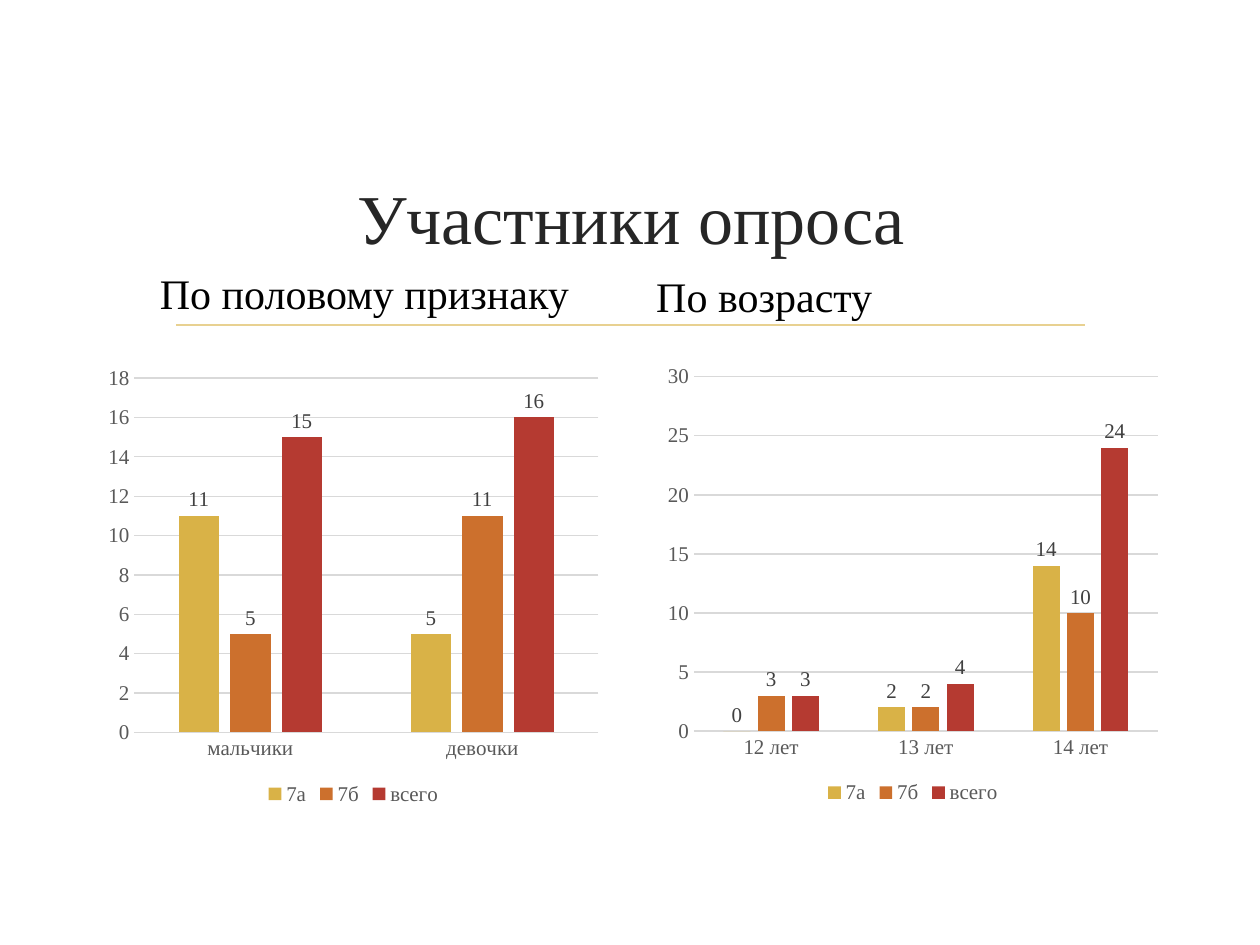
import pptx
import pptx.chart.data
import pptx.dml.color
import pptx.enum.chart
import pptx.enum.shapes
import pptx.enum.text
import pptx.oxml
import pptx.util

WIDTH, HEIGHT = 10, 7.5
FACE = "Times New Roman"
SERIES_COLORS = {"7а": "D9B247", "7б": "CC702D", "всего": "B53A31"}
PANEL_WIDTH = 4.05
CHART_HEIGHT = 3.59
HEADING_WIDTH, HEADING_HEIGHT = 3.65, 0.63


def rgb(value):
    return pptx.dml.color.RGBColor.from_string(value)


def inches(*lengths):
    return [pptx.util.Inches(length) for length in lengths]


def style_font(font, size, color):
    font.name = FACE
    font.size = pptx.util.Pt(size)
    font.color.rgb = rgb(color)


def style_line(line, color, width):
    line.color.rgb = rgb(color)
    line.width = pptx.util.Pt(width)


def add_text(page, area, text, size, color, anchor, align):
    frame = page.shapes.add_textbox(*inches(*area)).text_frame
    frame.word_wrap = True
    frame.vertical_anchor = anchor
    para = frame.paragraphs[0]
    para.text = text
    para.alignment = align
    style_font(para.font, size, color)


def add_header(page, area):
    """Place the title in its area and the rule just below it."""
    left, top, width, height = area
    add_text(page, area, "Участники опроса", 40, "262626",
             pptx.enum.text.MSO_ANCHOR.MIDDLE, pptx.enum.text.PP_ALIGN.CENTER)
    rule_y = top + height + 0.15
    rule = page.shapes.add_connector(
        pptx.enum.shapes.MSO_CONNECTOR.STRAIGHT,
        *inches(left + 0.11, rule_y, left + width - 0.12, rule_y))
    style_line(rule.line, "E8D191", 1.25)
    rule._element.spPr.append(pptx.oxml.parse_xml(
        '<a:effectLst xmlns:a="http://schemas.openxmlformats.org/drawingml/2006/main"/>'))


def style_axes(chart, top_value, step):
    for axis in (chart.category_axis, chart.value_axis):
        axis.major_tick_mark = pptx.enum.chart.XL_TICK_MARK.NONE
        axis.minor_tick_mark = pptx.enum.chart.XL_TICK_MARK.NONE
        style_font(axis.tick_labels.font, 12, "595959")
    style_line(chart.category_axis.format.line, "D9D9D9", 0.75)
    values = chart.value_axis
    values.format.line.fill.background()
    values.minimum_scale, values.maximum_scale, values.major_unit = 0, top_value, step
    style_line(values.major_gridlines.format.line, "D9D9D9", 0.75)


def add_column_chart(page, area, categories, rows, top_value, step):
    data = pptx.chart.data.CategoryChartData()
    data.categories = categories
    for name, values in zip(SERIES_COLORS, rows):
        data.add_series(name, values)
    chart = page.shapes.add_chart(
        pptx.enum.chart.XL_CHART_TYPE.COLUMN_CLUSTERED, *inches(*area), data).chart
    style_font(chart.font, 10, "000000")
    chart.has_title = False
    chart.has_legend = True
    chart.legend.position = pptx.enum.chart.XL_LEGEND_POSITION.BOTTOM
    chart.legend.include_in_layout = False
    style_font(chart.legend.font, 12, "595959")
    style_axes(chart, top_value, step)
    plot = chart.plots[0]
    plot.gap_width, plot.overlap = 219, -27
    plot.vary_by_categories = False
    for series, color in zip(plot.series, SERIES_COLORS.values()):
        series.format.fill.solid()
        series.format.fill.fore_color.rgb = rgb(color)
        series.invert_if_negative = False
        labels = series.data_labels
        labels.show_value = True
        labels.position = pptx.enum.chart.XL_LABEL_POSITION.OUTSIDE_END
        style_font(labels.font, 12, "404040")


def add_panel(page, heading_at, chart_at, heading, *chart_values):
    """Place one heading and the chart that belongs to it."""
    add_text(page, (*heading_at, HEADING_WIDTH, HEADING_HEIGHT), heading, 24, "000000",
             pptx.enum.text.MSO_ANCHOR.BOTTOM, pptx.enum.text.PP_ALIGN.LEFT)
    add_column_chart(page, (*chart_at, PANEL_WIDTH, CHART_HEIGHT), *chart_values)


def main():
    deck = pptx.Presentation()
    deck.slide_width, deck.slide_height = inches(WIDTH, HEIGHT)
    page = deck.slides.add_slide(deck.slide_layouts[6])
    add_header(page, (1.29, 1, 7.44, 1.43))
    add_panel(page, (1.17, 1.94), (0.78, 2.84), "По половому признаку",
              ["мальчики", "девочки"], [(11, 5), (5, 11), (15, 16)], 18, 2)
    add_panel(page, (5.11, 1.97), (5.22, 2.83), "По возрасту",
              ["12 лет", "13 лет", "14 лет"],
              [(0, 2, 14), (3, 2, 10), (3, 4, 24)], 30, 5)
    deck.save("out.pptx")


if __name__ == "__main__":
    main()
